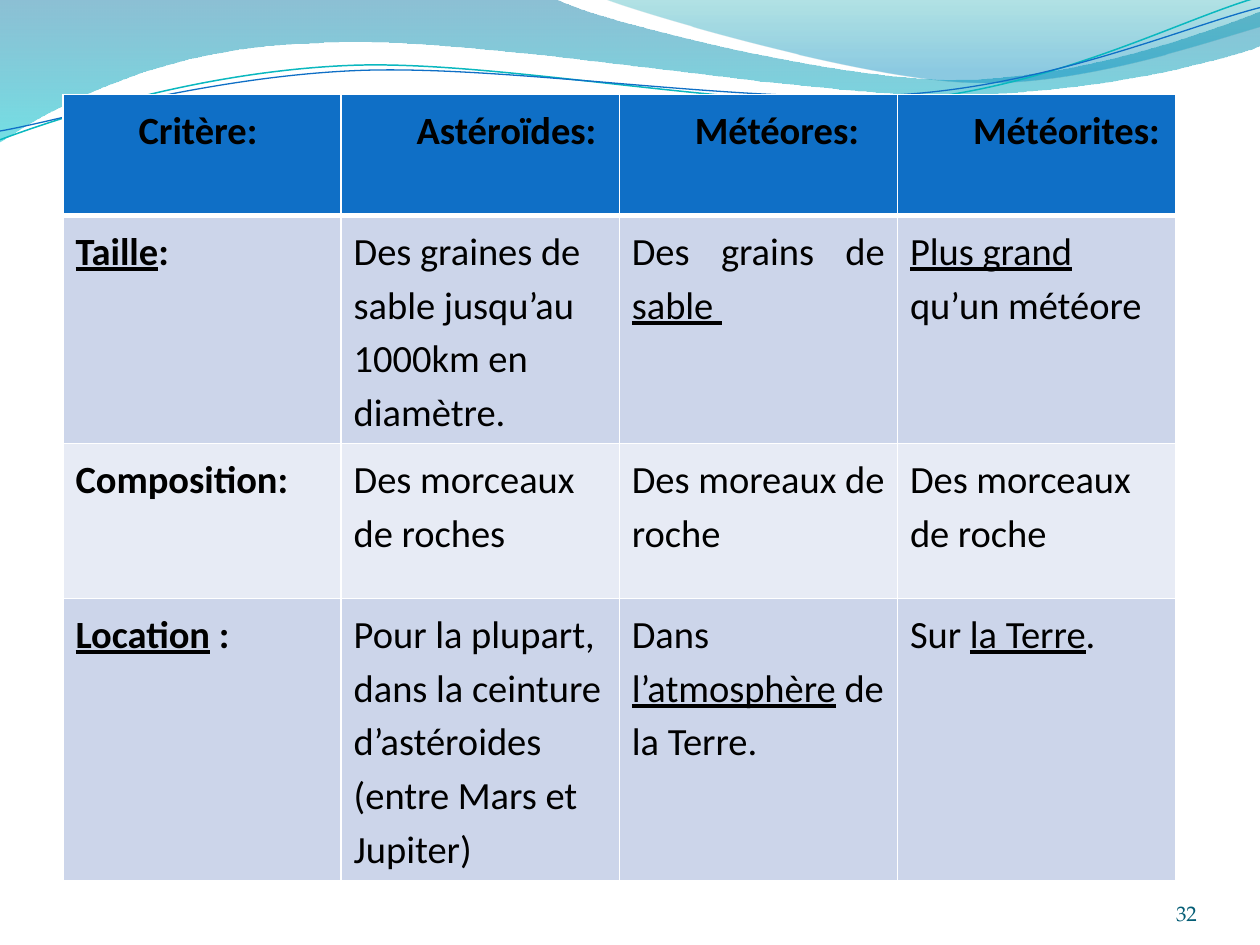
from dataclasses import dataclass
from math import cos, radians, sin

from lxml.etree import SubElement
from pptx import Presentation
from pptx.dml.color import RGBColor
from pptx.enum.text import MSO_ANCHOR, PP_ALIGN
from pptx.oxml.ns import qn
from pptx.util import Inches, Pt

Point = tuple[float, float]


@dataclass
class Outline:
    """A frame, its rotation, and segments of one point (straight) or three (curved)."""
    frame: tuple[float, float, float, float]
    segments: list[tuple[Point, ...]]
    rotation: float = 0


@dataclass
class Stop:
    """One gradient stop: position from 0 to 1, colour and opacity in percent."""
    position: float
    color: str
    opacity: int


@dataclass
class Wave:
    """A filled band."""
    outline: Outline
    stops: tuple[Stop, Stop]


@dataclass
class Strand:
    """A thin curved line."""
    outline: Outline
    color: str
    width: float


WAVES = [
    Wave(Outline((-0.01, -0.01, 10.02, 1.14), [
        ((0, 0),), ((4.4, -0.01),),
        ((4.76, 0.17), (6.64, 0.63), (7.58, 0.63)),
        ((8.53, 0.63), (9.58, 0.26), (10, 0.09)), ((10.01, 0.36),),
        ((9.83, 0.44), (8.7, 0.76), (7.46, 0.75)),
        ((6.22, 0.75), (3.82, 0.28), (2.57, 0.34)),
        ((1.29, 0.36), (0.46, 0.83), (-0.01, 1.13))]),
        (Stop(0, "0074A1", 45), Stop(1, "00C6CF", 55))),
    Wave(Outline((4.79, -0.01, 5.21, 0.7), [
        ((4.79, -0.01),),
        ((5.09, 0.11), (6.82, 0.62), (7.69, 0.65)),
        ((8.56, 0.69), (9.61, 0.32), (10, 0.21)), ((10, 0),)]),
        (Stop(0, "00A1A9", 30), Stop(0.8, "008BBF", 45))),
]
STRANDS = [
    Strand(Outline((-0.02, 0.22, 10.02, 0.71), [
        ((0, 1.11),),
        ((0.48, 0.93), (1.58, 0.57), (2.77, 0.52)),
        ((3.95, 0.47), (5.93, 0.89), (7.13, 0.8)),
        ((8.33, 0.71), (9.38, 0.15), (9.98, -0.02))], 357.3), "0AB8BF", 0.85),
    Strand(Outline((-0.02, 0.3, 10.03, 0.58), [
        ((0, 1.04),),
        ((0.47, 0.96), (1.64, 0.61), (2.83, 0.56)),
        ((4.03, 0.51), (5.97, 0.84), (7.17, 0.75)),
        ((8.36, 0.67), (9.41, 0.21), (10, 0.06))], 357.3), "0F6FC6", 0.75),
]
ROWS = [
    ["Critère:", "Astéroïdes:", "Météores:", "Météorites:"],
    ["_Taille_:", "Des graines de sable jusqu’au 1000km en diamètre.",
     "Des grains de _sable _", "_Plus grand _qu’un météore"],
    ["Composition:", "Des morceaux de roches", "Des moreaux de roche",
     "Des morceaux de roche"],
    ["_Location_ :",
     "Pour la plupart, dans la ceinture d’astéroides (entre Mars et Jupiter)",
     "Dans _l’atmosphère_ de la Terre.", "Sur _la Terre_."],
]
ROW_HEIGHTS = [0.96, 1.81, 1.23, 2.24]
ROW_FILLS = ["0F6FC6", "CCD5EA", "E7EBF5", "CCD5EA"]


def rgb(color: str) -> RGBColor:
    """Turn a hex string into a colour."""
    return RGBColor.from_string(color)


def to_frame(point: Point, outline: Outline) -> Point:
    """Turn a slide point into a point within the unrotated frame."""
    left, top, width, height = outline.frame
    x, y = point[0] - left - width / 2, point[1] - top - height / 2
    angle = radians(-outline.rotation)
    return (x * cos(angle) - y * sin(angle) + width / 2,
            x * sin(angle) + y * cos(angle) + height / 2)


def draw_outline(slide, outline: Outline, close: bool):
    """Draw a freeform whose three-point segments are Bézier curves."""
    corners = [(Inches(x), Inches(y)) for x, y in
               (segment[-1] for segment in outline.segments)]
    builder = slide.shapes.build_freeform(*corners[0])
    builder.add_line_segments(corners[1:], close=close)
    shape = builder.convert_to_shape()
    shape.shadow.inherit = False
    shape.left, shape.top, shape.width, shape.height = map(Inches, outline.frame)
    shape.rotation = outline.rotation
    course = next(shape._element.spPr.iter(qn("a:path")))
    course.set("w", str(shape.width))
    course.set("h", str(shape.height))
    for step, segment in zip(list(course), outline.segments):
        if len(segment) == 3:
            curve = SubElement(course, qn("a:cubicBezTo"))
            course.replace(step, curve)
            step = curve
        for index, point in enumerate(segment):
            x, y = to_frame(point, outline)
            node = step[index] if index < len(step) else SubElement(step, qn("a:pt"))
            node.set("x", str(Inches(x)))
            node.set("y", str(Inches(y)))
    return shape


def draw_wave(slide, wave: Wave) -> None:
    """Draw a band with a translucent vertical gradient."""
    shape = draw_outline(slide, wave.outline, True)
    shape.line.fill.background()
    shape.fill.gradient()
    shape.fill.gradient_angle = 270
    for gradient_stop, stop in zip(shape.fill.gradient_stops, wave.stops):
        gradient_stop.position = stop.position
        gradient_stop.color.rgb = rgb(stop.color)
    colors = shape._element.spPr.iter(qn("a:srgbClr"))
    for color, stop in zip(list(colors), wave.stops):
        SubElement(color, qn("a:alpha"), val=str(stop.opacity * 1000))


def draw_strand(slide, strand: Strand) -> None:
    """Draw a thin curved line."""
    shape = draw_outline(slide, strand.outline, False)
    shape.fill.background()
    shape.line.color.rgb = rgb(strand.color)
    shape.line.width = Pt(strand.width)


def set_borders(cell, top: float, bottom: float) -> None:
    """Give a cell white borders, one point wide at its sides."""
    properties = cell._tc.get_or_add_tcPr()
    widths = {"a:lnL": 1, "a:lnR": 1, "a:lnT": top, "a:lnB": bottom}
    for index, (tag, width) in enumerate(widths.items()):
        border = SubElement(properties, qn(tag), w=str(Pt(width)))
        fill = SubElement(border, qn("a:solidFill"))
        SubElement(fill, qn("a:srgbClr"), val="FFFFFF")
        properties.insert(index, border)


def write_cell(cell, text: str, row: int, column: int) -> None:
    """Fill a cell; text between underscores is underlined."""
    cell.fill.solid()
    cell.fill.fore_color.rgb = rgb(ROW_FILLS[row])
    set_borders(cell, 3 if row == 1 else 1, 3 if row == 0 else 1)
    paragraph = cell.text_frame.paragraphs[0]
    paragraph.line_spacing = 1.15
    if row == 0:
        paragraph._p.get_or_add_pPr().set("marL", str(Inches(0.5)))
    if row > 0 or column == 3:
        paragraph.space_after = Pt(10)
    if (row, column) == (1, 2):
        paragraph.alignment = PP_ALIGN.JUSTIFY
    paragraph.font.name = "Calibri"
    paragraph.font.size = Pt(22)
    paragraph.font.bold = row == 0 or column == 0
    paragraph.font.color.rgb = rgb("000000")
    for index, part in enumerate(text.split("_")):
        if part:
            run = paragraph.add_run()
            run.text = part
            if index % 2:
                run.font.underline = True


def draw_table(slide) -> None:
    """Draw the comparison table."""
    table = slide.shapes.add_table(
        len(ROWS), len(ROWS[0]), Inches(0.5), Inches(0.75),
        Inches(8.83), Inches(sum(ROW_HEIGHTS))).table
    table.first_row = table.horz_banding = False
    for row, (texts, height) in enumerate(zip(ROWS, ROW_HEIGHTS)):
        table.rows[row].height = Inches(height)
        for column, text in enumerate(texts):
            write_cell(table.cell(row, column), text, row, column)


def draw_page_number(slide) -> None:
    """Write the page number at the lower right."""
    frame = slide.shapes.add_textbox(
        Inches(8.67), Inches(6.95), Inches(0.83), Inches(0.4)).text_frame
    frame.word_wrap = True
    frame.vertical_anchor = MSO_ANCHOR.BOTTOM
    frame.margin_left = frame.margin_right = frame.margin_top = frame.margin_bottom = 0
    paragraph = frame.paragraphs[0]
    paragraph.text = "32"
    paragraph.alignment = PP_ALIGN.RIGHT
    paragraph.font.name = "TeX Gyre Pagella"
    paragraph.font.size = Pt(12)
    paragraph.font.color.rgb = rgb("045D75")


def main() -> None:
    """Build and save the slide."""
    presentation = Presentation()
    presentation.slide_width, presentation.slide_height = Inches(10), Inches(7.5)
    slide = presentation.slides.add_slide(presentation.slide_layouts[6])
    for wave in WAVES:
        draw_wave(slide, wave)
    for strand in STRANDS:
        draw_strand(slide, strand)
    draw_table(slide)
    draw_page_number(slide)
    presentation.save("out.pptx")


if __name__ == "__main__":
    main()
